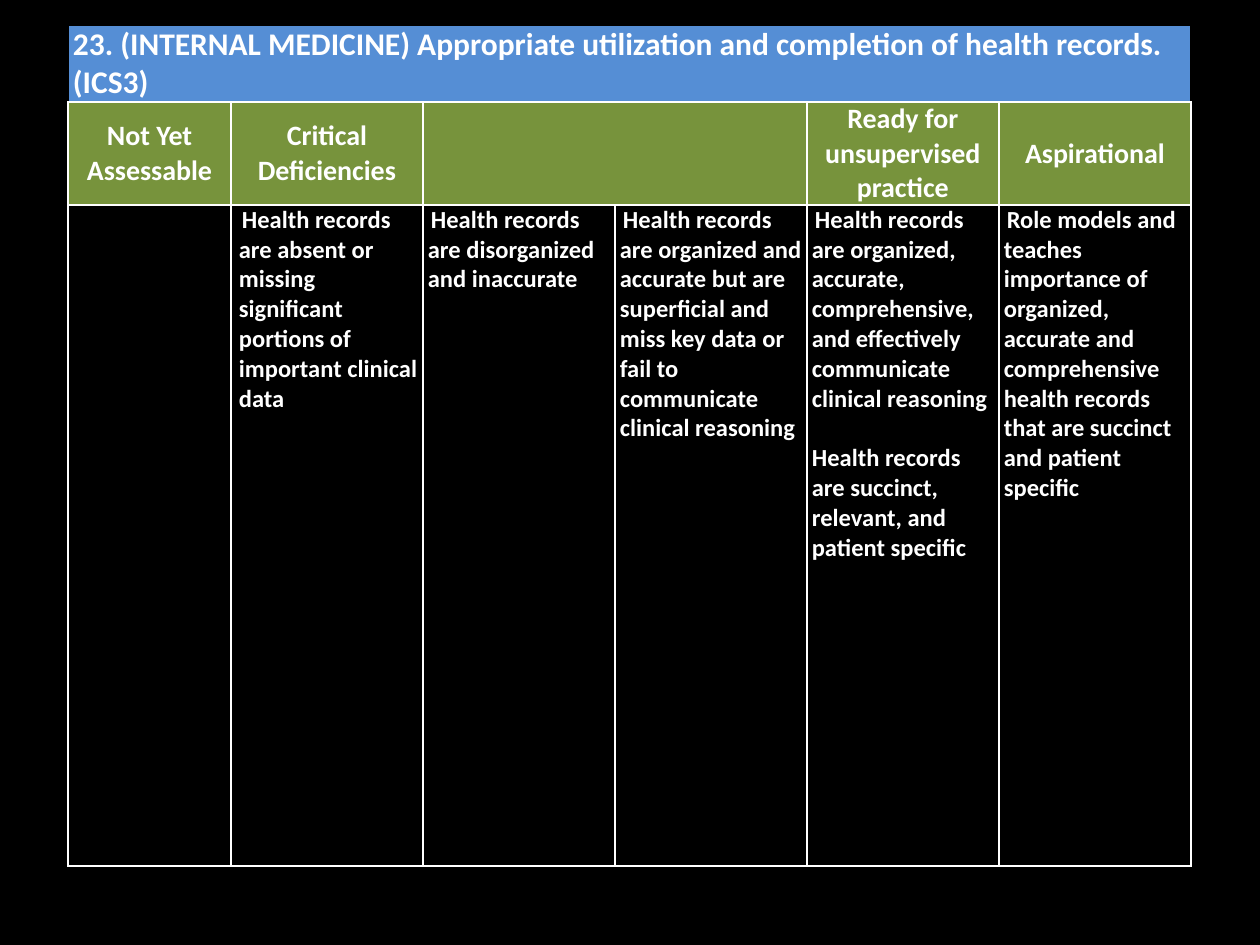
from lxml.etree import SubElement
from pptx import Presentation
from pptx.dml.color import RGBColor
from pptx.enum.text import MSO_ANCHOR, PP_ALIGN
from pptx.oxml.ns import qn
from pptx.util import Pt

PX = 914400 // 126
BLACK = RGBColor(0x00, 0x00, 0x00)
WHITE = RGBColor(0xFF, 0xFF, 0xFF)
BLUE = RGBColor(0x55, 0x8E, 0xD5)
GREEN = RGBColor(0x77, 0x93, 0x3C)

TITLE = "23. (INTERNAL MEDICINE) Appropriate utilization and completion of health records. (ICS3)"
LEVELS = ["Not Yet Assessable", "Critical Deficiencies", "", "",
          "Ready for unsupervised practice", "Aspirational"]
DESCRIPTIONS = [
    [],
    ["Health records are absent or missing significant portions of important clinical data"],
    ["Health records are disorganized and inaccurate"],
    ["Health records are organized and accurate but are superficial and miss key data "
     "or fail to communicate clinical reasoning"],
    ["Health records are organized, accurate, comprehensive, and effectively "
     "communicate clinical reasoning",
     "Health records are succinct, relevant, and patient specific"],
    ["Role models and teaches importance of organized, accurate and comprehensive "
     "health records that are succinct and patient specific"],
]


def write(paragraph, text, size, align=PP_ALIGN.LEFT, margin=0, indent=0, before=0):
    paragraph.alignment = align
    paragraph.space_before = Pt(before)
    properties = paragraph._p.get_or_add_pPr()
    properties.set("marL", str(margin * PX))
    properties.set("indent", str(indent * PX))
    run = paragraph.add_run()
    run.text = text
    run.font.name = "Calibri"
    run.font.size = Pt(size)
    run.font.bold = True
    run.font.color.rgb = WHITE


def format_cell(cell, fill, colors):
    cell.margin_left = cell.margin_right = 5 * PX
    cell.margin_top = cell.margin_bottom = 0
    properties = cell._tc.get_or_add_tcPr()
    for side, color in zip("LRTB", colors):
        line = SubElement(properties, qn(f"a:ln{side}"), w=str(Pt(1)))
        solid = SubElement(line, qn("a:solidFill"))
        SubElement(solid, qn("a:srgbClr"), val=str(color))
    if fill is None:
        cell.fill.background()
    else:
        cell.fill.solid()
        cell.fill.fore_color.rgb = fill


presentation = Presentation()
presentation.slide_width = 1260 * PX
presentation.slide_height = 945 * PX
slide = presentation.slides.add_slide(presentation.slide_layouts[6])
slide.background.fill.solid()
slide.background.fill.fore_color.rgb = BLACK

widths = [163] + [192] * 5
heights = [76, 103, 661]
table = slide.shapes.add_table(
    len(heights), len(widths), 68 * PX, 25 * PX, sum(widths) * PX, sum(heights) * PX
).table
table.first_row = False
table.horz_banding = False
for column, width in zip(table.columns, widths):
    column.width = width * PX
for row, height in zip(table.rows, heights):
    row.height = height * PX

title_borders = [BLACK, BLACK, BLACK, WHITE]
grid_borders = [WHITE] * 4
for row, fill, borders in zip(table.rows, [BLUE, GREEN, None],
                              [title_borders, grid_borders, grid_borders]):
    for cell in row.cells:
        format_cell(cell, fill, borders)

table.cell(0, 0).merge(table.cell(0, 5))
table.cell(1, 2).merge(table.cell(1, 3))

write(table.cell(0, 0).text_frame.paragraphs[0], TITLE, 18)

for index, level in enumerate(LEVELS):
    if level:
        cell = table.cell(1, index)
        cell.vertical_anchor = MSO_ANCHOR.MIDDLE
        write(cell.text_frame.paragraphs[0], level, 16, align=PP_ALIGN.CENTER)

for index, texts in enumerate(DESCRIPTIONS):
    frame = table.cell(2, index).text_frame
    for number, text in enumerate(texts):
        if number == 0:
            write(frame.paragraphs[0], text, 14, margin=3 if index == 1 else 0, indent=3)
        else:
            write(frame.add_paragraph(), text, 14, before=17)

presentation.save("out.pptx")
